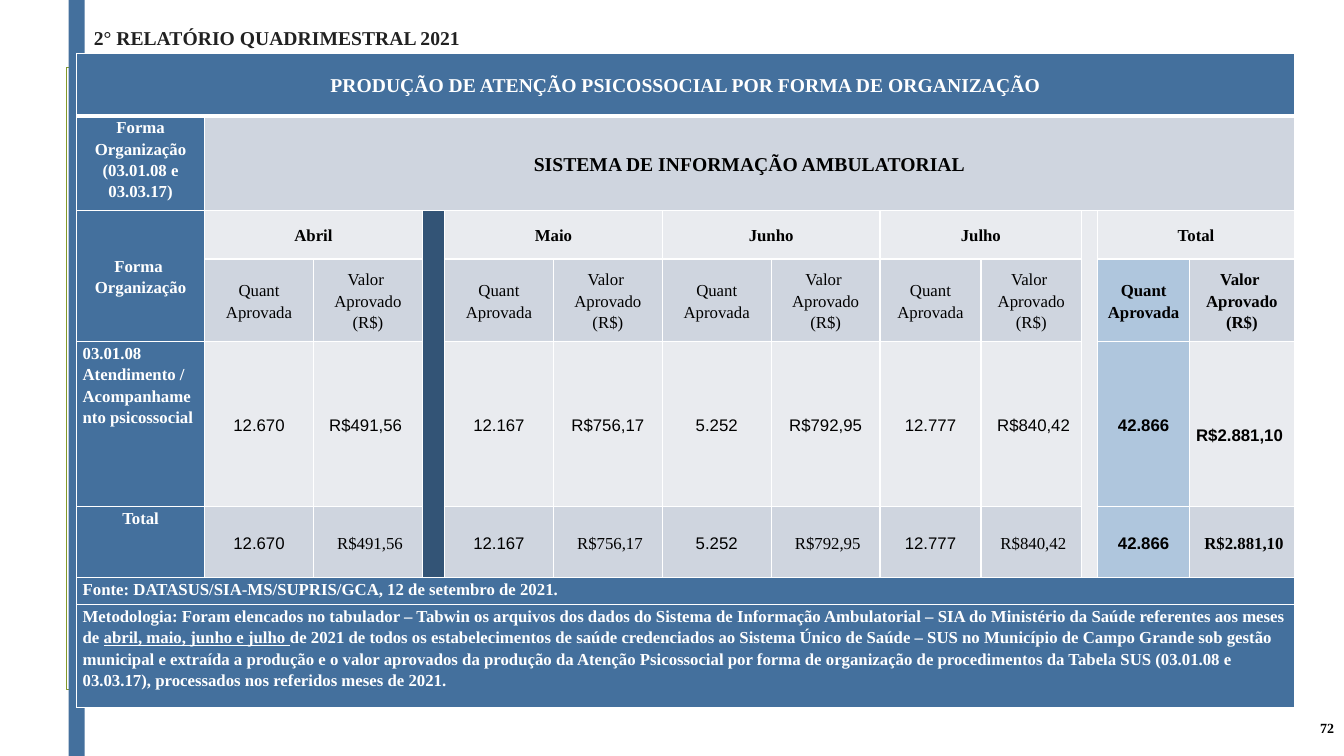
from dataclasses import dataclass

from lxml.etree import SubElement as Sub
from pptx import Presentation
from pptx.dml.color import RGBColor as Rgb
from pptx.enum.shapes import MSO_SHAPE as Form
from pptx.enum.text import MSO_ANCHOR as Anchor, MSO_AUTO_SIZE as Fit, PP_ALIGN as Align
from pptx.oxml.ns import qn
from pptx.util import Emu, Pt

SCALE = 9144  # EMU in one px, 100 px to the inch


def px(n):
    return Emu(n * SCALE)


@dataclass(frozen=True)
class Theme:
    blue: str = "44709D"
    navy: str = "335476"
    sky: str = "AFC6DD"
    dark: str = "CFD5DF"
    light: str = "E9EBEF"
    green: str = "83992A"
    white: str = "FFFFFF"
    black: str = "000000"
    ink: str = "212121"
    serif: str = "Times New Roman"
    sans: str = "Arial"
    head: int = 14
    body: int = 12
    small: int = 10


class Deck:
    def __init__(self, theme, wide, high):
        self.theme = theme
        self.prs = Presentation()
        self.prs.slide_width, self.prs.slide_height = px(wide), px(high)
        self.slide = self.prs.slides.add_slide(self.prs.slide_layouts[5])

    def style(self, para, parts, size, color, bold=True, face=None, align=Align.LEFT):
        """Fill one paragraph; parts is a text or a list of (text, underline)."""
        para.alignment = align
        if isinstance(parts, str):
            para.text = parts
        else:
            for text, line in parts:
                run = para.add_run()
                run.text, run.font.underline = text, line
        look = {"size": Pt(size), "bold": bold, "name": face or self.theme.serif}
        for run in para.runs:
            for key, value in look.items():
                setattr(run.font, key, value)
            run.font.color.rgb = Rgb.from_string(color)

    def rect(self, box, fill=None, line=None):
        shape = self.slide.shapes.add_shape(Form.RECTANGLE, *map(px, box))
        shape.shadow.inherit = False
        if fill:
            shape.fill.solid()
            shape.fill.fore_color.rgb = Rgb.from_string(fill)
        else:
            shape.fill.background()
        if line:
            shape.line.color.rgb = Rgb.from_string(line)
            shape.line.width = Pt(1.25)
        else:
            shape.line.fill.background()

    def title(self, box, text):
        shape = self.slide.shapes.title
        shape.left, shape.top, shape.width, shape.height = map(px, box)
        frame = shape.text_frame
        look = {"word_wrap": False, "auto_size": Fit.NONE, "vertical_anchor": Anchor.MIDDLE}
        for key, value in look.items():
            setattr(frame, key, value)
        self.style(frame.paragraphs[0], text, self.theme.head, self.theme.ink)

    def label(self, box, text, size, color, align):
        frame = self.slide.shapes.add_textbox(*map(px, box)).text_frame
        frame.word_wrap = True
        frame.vertical_anchor = Anchor.MIDDLE
        self.style(frame.paragraphs[0], text, size, color, align=align)

    def grid(self, left, top, cols, rows):
        box = map(px, (left, top, sum(cols), sum(rows)))
        self.table = self.slide.shapes.add_table(len(rows), len(cols), *box).table
        for col, wide in zip(self.table.columns, cols):
            col.width = px(wide)
        for row, high in zip(self.table.rows, rows):
            row.height = px(high)
        for r in range(len(rows)):
            for c in range(len(cols)):
                self.blank(r, c)

    def blank(self, r, c):
        """Margins, white borders and a small type size for an empty cell."""
        cell = self.table.cell(r, c)
        look = {"margin_left": 6, "margin_right": 6, "margin_top": 0, "margin_bottom": 0}
        for key, value in look.items():
            setattr(cell, key, px(value))
        para = cell.text_frame.paragraphs[0]
        para.line_spacing = 1.15
        Sub(para._p, qn("a:endParaRPr"), sz=str(self.theme.body * 100))
        props = cell._tc.get_or_add_tcPr()
        for side in "LRTB":
            thick = 3 if (r, side) in ((0, "B"), (1, "T")) else 1
            edge = Sub(props, qn(f"a:ln{side}"), w=str(Pt(thick)))
            paint = Sub(edge, qn("a:solidFill"))
            Sub(paint, qn("a:srgbClr"), val=self.theme.white)

    def cell(self, r, c, parts, fill, span=(1, 1), anchor=Anchor.MIDDLE, drop=0, **style):
        cell = self.table.cell(r, c)
        if span != (1, 1):
            cell.merge(self.table.cell(r + span[0] - 1, c + span[1] - 1))
        cell.fill.solid()
        cell.fill.fore_color.rgb = Rgb.from_string(fill)
        cell.vertical_anchor = anchor
        cell.margin_top = px(drop)
        if parts:
            look = {"size": self.theme.body, "color": self.theme.black, "align": Align.CENTER}
            self.style(cell.text_frame.paragraphs[0], parts, **{**look, **style})


def main():
    t = Theme()
    deck = Deck(t, 1333, 750)

    # Frame, side bar, title and page number
    deck.rect((66, 67, 1200, 617), line=t.green)
    deck.rect((68, 0, 16, 750), fill=t.blue)
    deck.title((83, 20, 400, 34), "2° RELATÓRIO QUADRIMESTRAL 2021")
    deck.label((1248, 702, 85, 40), "72", t.small, t.black, Align.RIGHT)

    # Table heading and the first column
    cols = [127, 108, 108, 22] + [108] * 4 + [100, 100, 15, 91, 104]
    deck.grid(76, 53, cols, [62, 94, 48, 82, 164, 70, 27, 102])
    full = (1, len(cols))
    deck.cell(0, 0, "PRODUÇÃO DE ATENÇÃO PSICOSSOCIAL POR FORMA DE ORGANIZAÇÃO",
              t.blue, full, size=t.head, color=t.white)
    deck.cell(1, 1, "SISTEMA DE INFORMAÇÃO AMBULATORIAL", t.dark,
              (1, len(cols) - 1), size=t.head)
    deck.cell(2, 0, "Forma \nOrganização", t.blue, (2, 1), color=t.white)
    for r, text, align in (
        (1, "Forma Organização (03.01.08 e 03.03.17)", Align.CENTER),
        (4, "03.01.08 Atendimento / Acompanhamento psicossocial", Align.LEFT),
        (5, "Total", Align.CENTER),
    ):
        deck.cell(r, 0, text, t.blue, anchor=Anchor.TOP, color=t.white, align=align)

    # Gaps after April and before the total
    deck.cell(2, 3, "", t.navy, (4, 1))
    deck.cell(2, 10, "", t.light, (4, 1))

    # Months and total: quantity and value side by side
    for c, name, count, value, total in (
        (1, "Abril", "12.670", "R$491,56 ", " R$491,56"),
        (4, "Maio", "12.167", "R$756,17", " R$756,17"),
        (6, "Junho", "5.252", "R$792,95", " R$792,95"),
        (8, "Julho", "12.777", " R$840,42", " R$840,42"),
        (11, "Total", "42.866", "R$2.881,10 ", " R$2.881,10"),
    ):
        last = name == "Total"
        deck.cell(2, c, name, t.light, (1, 2))
        for r, fill, pair, faces in (
            (3, t.dark, ("Quant Aprovada", "Valor \nAprovado (R$)"), (t.serif, t.serif)),
            (4, t.light, (count, value), (t.sans, t.sans)),
            (5, t.dark, (count, total), (t.sans, t.serif)),
        ):
            deck.cell(r, c, pair[0], t.sky if last else fill, bold=last, face=faces[0])
            deck.cell(r, c + 1, pair[1], fill, bold=last, face=faces[1],
                      drop=20 if last and r == 4 else 0)

    # Source and method
    method = [
        ("Metodologia: Foram elencados no tabulador – Tabwin os arquivos dos dados do "
         "Sistema de Informação Ambulatorial – SIA do Ministério da Saúde referentes aos "
         "meses de ", False),
        ("abril, maio, junho e julho ", True),
        ("de 2021 de todos os estabelecimentos de saúde credenciados ao Sistema Único de "
         "Saúde – SUS no Município de Campo Grande sob gestão municipal e extraída a "
         "produção e o valor aprovados da produção da Atenção Psicossocial por forma de "
         "organização de procedimentos da Tabela SUS (03.01.08 e 03.03.17), processados "
         "nos referidos meses de 2021.", False),
    ]
    source = "Fonte: DATASUS/SIA-MS/SUPRIS/GCA, 12 de setembro de 2021."
    for r, parts in ((6, source), (7, method)):
        deck.cell(r, 0, parts, t.blue, full, anchor=Anchor.TOP,
                  color=t.white, align=Align.LEFT)

    deck.prs.save("out.pptx")


if __name__ == "__main__":
    main()
